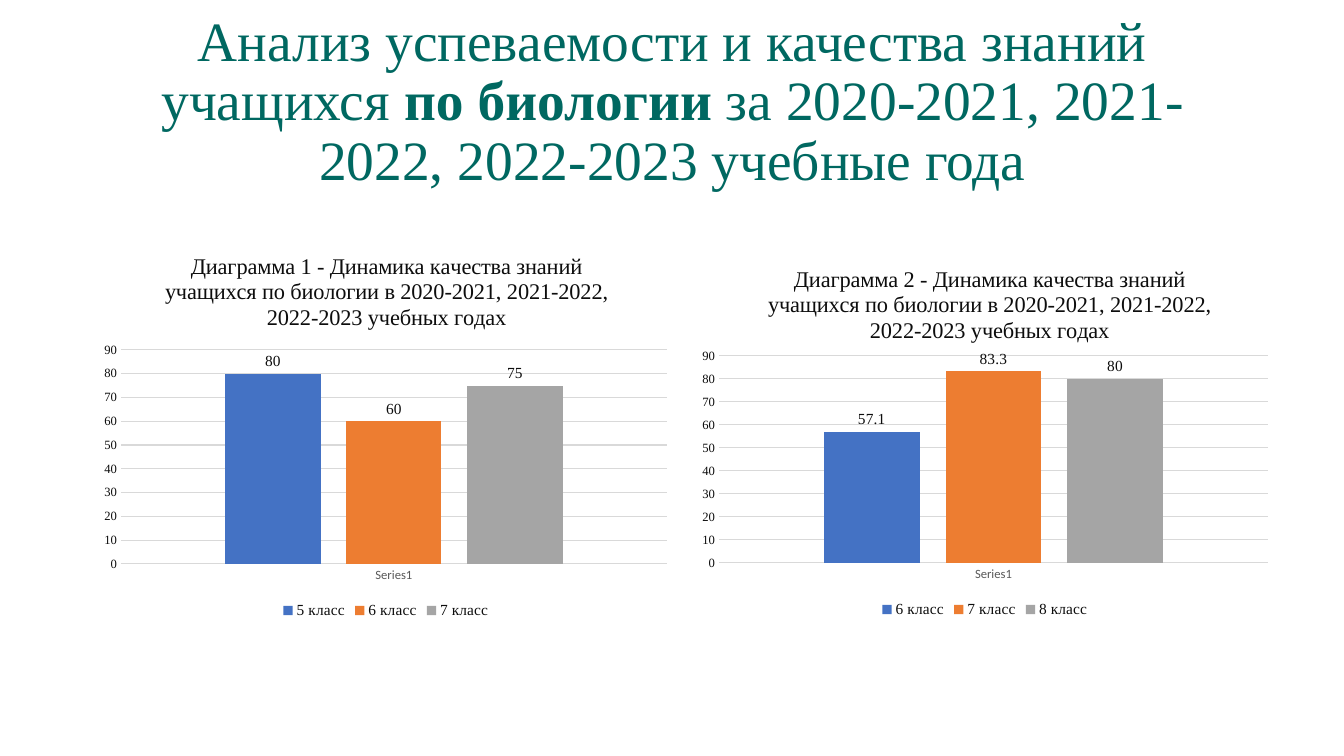
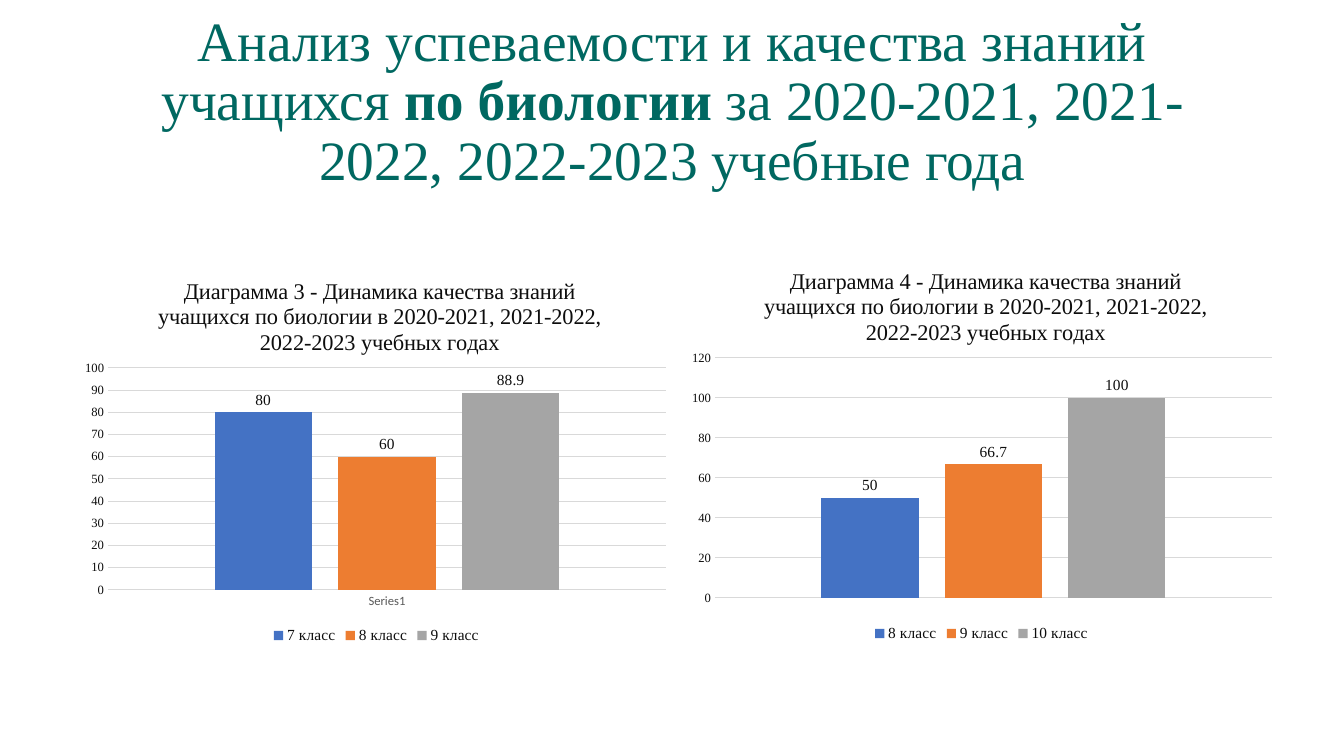
from pptx import Presentation
from pptx.chart.data import CategoryChartData
from pptx.dml.color import RGBColor
from pptx.enum.chart import (XL_CHART_TYPE, XL_LABEL_POSITION,
                             XL_LEGEND_POSITION, XL_TICK_MARK)
from pptx.enum.text import MSO_ANCHOR, MSO_AUTO_SIZE, PP_ALIGN
from pptx.oxml import parse_xml
from pptx.oxml.ns import nsdecls
from pptx.util import Pt

PX = 12192000 / 1344
TEAL = RGBColor(0x00, 0x68, 0x61)
INK = RGBColor(0x0D, 0x0D, 0x0D)
BLACK = RGBColor(0x00, 0x00, 0x00)
GREY = RGBColor(0x59, 0x59, 0x59)
RULE = RGBColor(0xD9, 0xD9, 0xD9)
FILLS = (RGBColor(0x44, 0x72, 0xC4), RGBColor(0xED, 0x7D, 0x31),
         RGBColor(0xA5, 0xA5, 0xA5))
SERIF = "Times New Roman"
SANS = "Calibri"

# Each chart: box, plot area and title corner in slide px, first grade, values
SLIDES = (
    (((93, 236, 586, 387), (121, 350, 546, 214), (161, 248), 5, (80, 60, 75)),
     ((690, 242, 590, 380), (719, 356, 549, 207), (764, 261), 6, (57.1, 83.3, 80))),
    (((74, 254, 605, 394), (108, 368, 558, 222), (154, 273), 7, (80, 60, 88.9)),
     ((679, 244, 605, 402), (715, 358, 557, 240), (760, 263), 8, (50, 66.7, 100))),
)


def style(font, size, color=INK, name=SERIF, bold=False):
    font.size = Pt(size)
    font.name = name
    font.bold = bold
    font.color.rgb = color


def write(para, text, **look):
    run = para.add_run()
    run.text = text
    style(run.font, **look)


deck = Presentation()
deck.slide_width = round(1344 * PX)
deck.slide_height = round(756 * PX)
count = 0

for charts in SLIDES:
    slide = deck.slides.add_slide(deck.slide_layouts[5])
    title = slide.shapes.title
    title.left, title.top, title.width, title.height = (
        round(n * PX) for n in (93, 77, 1159, 52))
    frame = title.text_frame
    frame.word_wrap = True
    frame.auto_size = MSO_AUTO_SIZE.NONE
    frame.vertical_anchor = MSO_ANCHOR.MIDDLE
    para = frame.paragraphs[0]
    para.alignment = PP_ALIGN.CENTER
    para.line_spacing = 0.9
    for text, bold in (("Анализ успеваемости и качества знаний учащихся ", False),
                       ("по биологии ", True),
                       ("за 2020-2021, 2021-2022, 2022-2023 учебные года", False)):
        write(para, text, size=39.6, color=TEAL, bold=bold)

    for box, area, spot, grade, values in charts:
        count += 1
        data = CategoryChartData()
        data.categories = ["Series1"]
        for step, value in enumerate(values):
            data.add_series(f"{grade + step} класс", [value])
        chart = slide.shapes.add_chart(
            XL_CHART_TYPE.COLUMN_CLUSTERED, *(round(n * PX) for n in box), data).chart
        style(chart.font, 10, BLACK, SANS)

        chart.has_title = True
        write(chart.chart_title.text_frame.paragraphs[0],
              f"Диаграмма {count} - Динамика качества знаний учащихся по биологии "
              "в 2020-2021, 2021-2022, 2022-2023 учебных годах", size=16)

        chart.has_legend = True
        chart.legend.position = XL_LEGEND_POSITION.BOTTOM
        chart.legend.include_in_layout = False
        style(chart.legend.font, 11)

        cat = chart.category_axis
        cat.major_tick_mark = XL_TICK_MARK.NONE
        cat.format.line.color.rgb = RULE
        cat.format.line.width = Pt(0.75)
        style(cat.tick_labels.font, 9, GREY, SANS)
        cat.visible = count < 4

        axis = chart.value_axis
        axis.major_tick_mark = XL_TICK_MARK.NONE
        axis.format.line.fill.background()
        axis.major_gridlines.format.line.color.rgb = RULE
        axis.major_gridlines.format.line.width = Pt(0.75)
        style(axis.tick_labels.font, 9)

        plot = chart.plots[0]
        plot.gap_width = 219
        plot.overlap = -27
        plot.vary_by_categories = False
        for series, fill in zip(plot.series, FILLS):
            series.format.fill.solid()
            series.format.fill.fore_color.rgb = fill
            labels = series.data_labels
            labels.show_value = True
            labels.position = XL_LABEL_POSITION.OUTSIDE_END
            style(labels.font, 11)

        # Fix the title and the plot area as fractions of the chart box
        left, top, width, height = box
        for tag, place, index in (("title", spot, 1), ("plotArea", area, 0)):
            node = chart.element.xpath(f"c:chart/c:{tag}")[0]
            for old in node.xpath("c:layout"):
                node.remove(old)
            parts = [("xMode", "edge"), ("yMode", "edge"),
                     ("x", (place[0] - left) / width),
                     ("y", (place[1] - top) / height)]
            if tag == "plotArea":
                parts.insert(0, ("layoutTarget", "inner"))
                parts += [("w", place[2] / width), ("h", place[3] / height)]
            inner = "".join(f'<c:{key} val="{val}"/>' for key, val in parts)
            node.insert(index, parse_xml(
                f'<c:layout {nsdecls("c")}><c:manualLayout>{inner}'
                '</c:manualLayout></c:layout>'))

deck.save("out.pptx")
